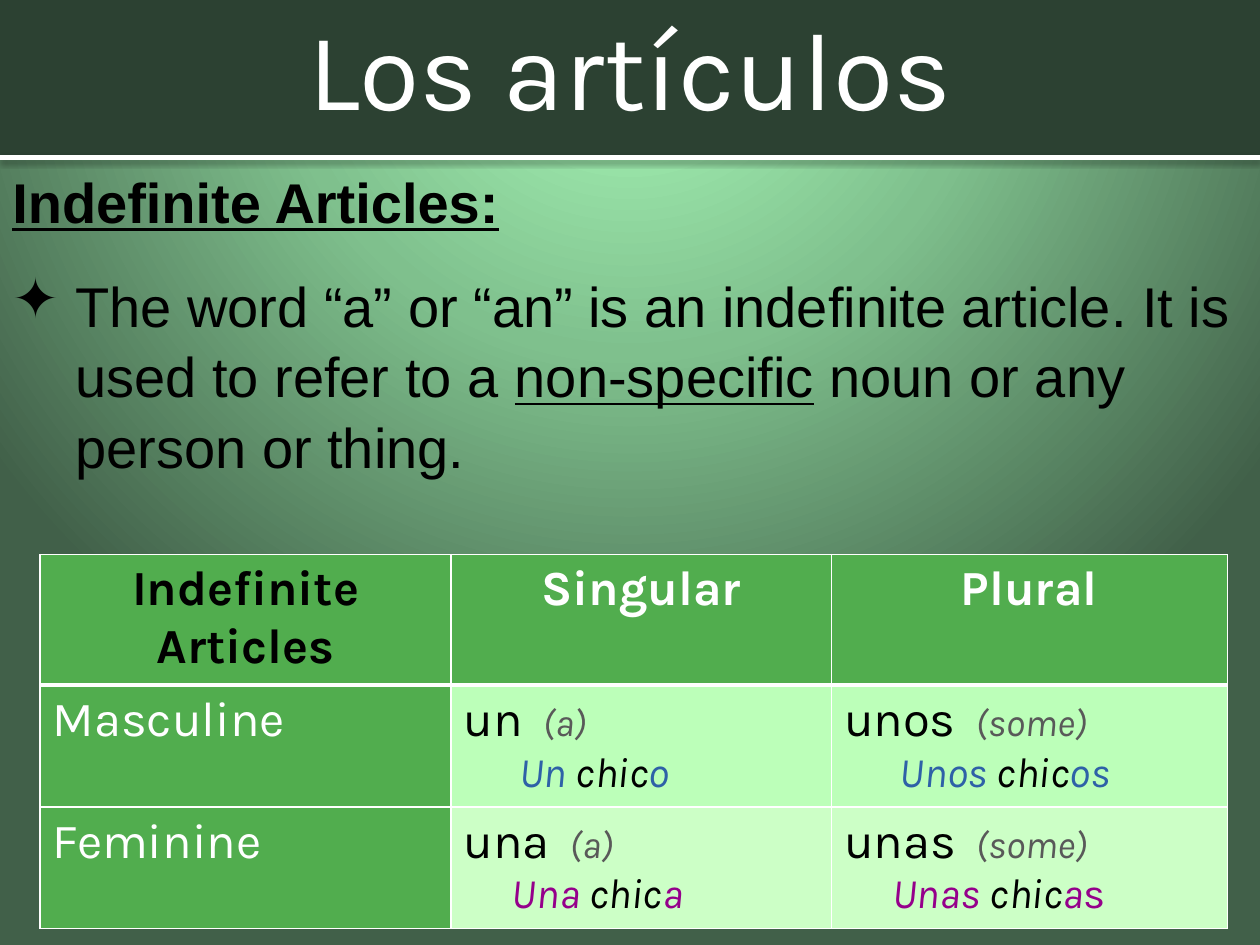
from lxml import etree
from pptx import Presentation
from pptx.dml.color import RGBColor
from pptx.enum.shapes import MSO_CONNECTOR, MSO_SHAPE
from pptx.enum.text import MSO_ANCHOR, MSO_AUTO_SIZE, PP_ALIGN
from pptx.oxml import parse_xml
from pptx.oxml.ns import qn
from pptx.util import Cm, Pt

RECTANGLE, STRAIGHT = MSO_SHAPE.RECTANGLE, MSO_CONNECTOR.STRAIGHT
CENTER, LEFT, MIDDLE = PP_ALIGN.CENTER, PP_ALIGN.LEFT, MSO_ANCHOR.MIDDLE
NO_FIT = MSO_AUTO_SIZE.NONE
NAMESPACE = 'xmlns:a="http://schemas.openxmlformats.org/drawingml/2006/main"'

BLACK = RGBColor(0x00, 0x00, 0x00)
WHITE = RGBColor(0xFF, 0xFF, 0xFF)
GREY = RGBColor(0x59, 0x59, 0x59)
BLUE = RGBColor(0x2E, 0x61, 0xA7)
PURPLE = RGBColor(0x95, 0x00, 0x8B)
BAND_GREEN = RGBColor(0x2C, 0x41, 0x32)
LABEL_GREEN = RGBColor(0x51, 0xAD, 0x4E)
MASCULINE_GREEN = RGBColor(0xBC, 0xFF, 0xB9)
FEMININE_GREEN = RGBColor(0xCC, 0xFF, 0xC6)
BACKGROUND_STOPS = [(0, "ADFFBD"), (45, "7FC08D"), (100, "416049")]

# Content
TITLE = "Los artículos"
HEADING = "Indefinite Articles:"
DEFINITION = [
    ("The word “a” or “an” is an indefinite article. It is used to refer to a ", False),
    ("non-specific", True),
    (" noun or any person or thing.", False),
]
HEADERS = [("Indefinite Articles", BLACK), ("Singular", WHITE), ("Plural", WHITE)]
# Gender, cell fill, accent, example indent, then article, meaning and example parts;
# example parts alternate accent, black, accent, and a fourth one is upright.
GENDERS = [
    ("Masculine", MASCULINE_GREEN, BLUE, 1.12, [
        ("un ", " (a)", ["Un", " chic", "o"]),
        ("unos ", " (some)", ["Unos", " chic", "os"])]),
    ("Feminine", FEMININE_GREEN, PURPLE, 0.97, [
        ("una ", " (a)", ["Una", " chic", "a"]),
        ("unas ", " (some)", ["Unas", " chic", "a", "s"])]),
]

# Layout in centimetres
PAGE_WIDTH, PAGE_HEIGHT = 25.4, 19.05
BAND_HEIGHT = 3.18
TABLE_LEFT, TABLE_TOP = 0.81, 11.18
COLUMN_WIDTHS = [8.28, 7.67, 7.98]
ROW_HEIGHTS = [2.57, 2.39, 2.39]


def add_span(para, text, size, color, font="Karla", bold=False, italic=False, underline=False):
    span = para.add_run()
    span.text = text
    span.font.name, span.font.size = font, Pt(size)
    span.font.bold, span.font.italic, span.font.underline = bold, italic, underline
    span.font.color.rgb = color


def style_cell(cell, fill, bottom=1):
    cell.fill.solid()
    cell.fill.fore_color.rgb = fill
    properties = cell._tc.get_or_add_tcPr()
    for index, (side, width) in enumerate([("L", 1), ("R", 1), ("T", 1), ("B", bottom)]):
        border = parse_xml(
            f'<a:ln{side} {NAMESPACE} w="{Pt(width)}"><a:solidFill>'
            f'<a:srgbClr val="{WHITE}"/></a:solidFill></a:ln{side}>')
        properties.insert(index, border)


def paint_background(page):
    page.background.fill.solid()
    stops = "".join(f'<a:gs pos="{position * 1000}"><a:srgbClr val="{color}"/></a:gs>'
                    for position, color in BACKGROUND_STOPS)
    gradient = parse_xml(
        f'<a:gradFill {NAMESPACE} rotWithShape="1"><a:gsLst>{stops}</a:gsLst>'
        '<a:path path="circle"><a:fillToRect l="50000" t="-80000" r="50000" b="180000"/>'
        '</a:path></a:gradFill>')
    solid = next(page.element.iter(qn("a:solidFill")))
    solid.getparent().replace(solid, gradient)


def add_header(page):
    band = page.shapes.add_shape(RECTANGLE, 0, 0, Cm(PAGE_WIDTH), Cm(BAND_HEIGHT))
    band.shadow.inherit = False
    band.fill.solid()
    band.fill.fore_color.rgb = BAND_GREEN
    band.line.fill.background()

    rule = page.shapes.add_connector(STRAIGHT, 0, Cm(BAND_HEIGHT), Cm(PAGE_WIDTH), Cm(BAND_HEIGHT))
    rule.line.color.rgb, rule.line.width = WHITE, Pt(3)
    effects = etree.SubElement(rule._element.spPr, qn("a:effectLst"))
    effects.append(parse_xml(
        f'<a:outerShdw {NAMESPACE} blurRad="{Pt(3.1)}" dist="{Pt(1.6)}" dir="5400000" '
        'rotWithShape="0"><a:srgbClr val="000000"><a:alpha val="38000"/></a:srgbClr>'
        '</a:outerShdw>'))

    title = page.shapes.title
    title.left, title.top, title.width, title.height = 0, 0, Cm(PAGE_WIDTH), Cm(2.69)
    frame = title.text_frame
    frame.auto_size, frame.vertical_anchor = NO_FIT, MIDDLE
    frame.paragraphs[0].alignment = CENTER
    add_span(frame.paragraphs[0], TITLE, 63, WHITE)
    page.shapes.element.append(title.element)  # in front of the band


def add_definition(page):
    box = page.shapes.add_textbox(0, Cm(BAND_HEIGHT), Cm(PAGE_WIDTH), Cm(7.6))
    frame = box.text_frame
    frame.word_wrap = True
    heading, definition = frame.paragraphs[0], frame.add_paragraph()
    heading.space_before, definition.space_before = Pt(6.4), Pt(19.2)
    heading.line_spacing = definition.line_spacing = 1.05
    add_span(heading, HEADING, 32, BLACK, "Arial", bold=True, underline=True)
    for text, underline in DEFINITION:
        add_span(definition, text, 32, BLACK, "Arial", underline=underline)
    properties = definition._p.get_or_add_pPr()
    properties.set("marL", str(Cm(1.27)))
    properties.set("indent", str(-Cm(1.27)))
    etree.SubElement(properties, qn("a:buChar")).set("char", "✦")


def add_articles(page):
    table = page.shapes.add_table(
        len(ROW_HEIGHTS), len(COLUMN_WIDTHS), Cm(TABLE_LEFT), Cm(TABLE_TOP),
        Cm(sum(COLUMN_WIDTHS)), Cm(sum(ROW_HEIGHTS))).table
    for column, width in zip(table.columns, COLUMN_WIDTHS):
        column.width = Cm(width)
    for row, height in zip(table.rows, ROW_HEIGHTS):
        row.height = Cm(height)

    for index, (text, color) in enumerate(HEADERS):
        cell = table.cell(0, index)
        style_cell(cell, LABEL_GREEN, bottom=3)
        para = cell.text_frame.paragraphs[0]
        para.alignment = CENTER
        add_span(para, text, 28, color, bold=True)

    for row, (gender, fill, accent, indent, articles) in enumerate(GENDERS, 1):
        label = table.cell(row, 0)
        style_cell(label, LABEL_GREEN)
        add_span(label.text_frame.paragraphs[0], gender, 28, WHITE)
        for column, (article, meaning, example) in enumerate(articles, 1):
            cell = table.cell(row, column)
            style_cell(cell, fill)
            para = cell.text_frame.paragraphs[0]
            para.alignment = LEFT
            add_span(para, article, 28, BLACK)
            add_span(para, meaning, 22, GREY, italic=True)
            para = cell.text_frame.add_paragraph()
            para._p.get_or_add_pPr().set("marL", str(Cm(indent)))
            for part, text in enumerate(example):
                add_span(para, text, 24, BLACK if part == 1 else accent, italic=part < 3)


def main():
    deck = Presentation()
    deck.slide_width, deck.slide_height = Cm(PAGE_WIDTH), Cm(PAGE_HEIGHT)
    page = deck.slides.add_slide(deck.slide_layouts[5])
    paint_background(page)
    add_header(page)
    add_definition(page)
    add_articles(page)
    deck.save("out.pptx")


if __name__ == "__main__":
    main()
